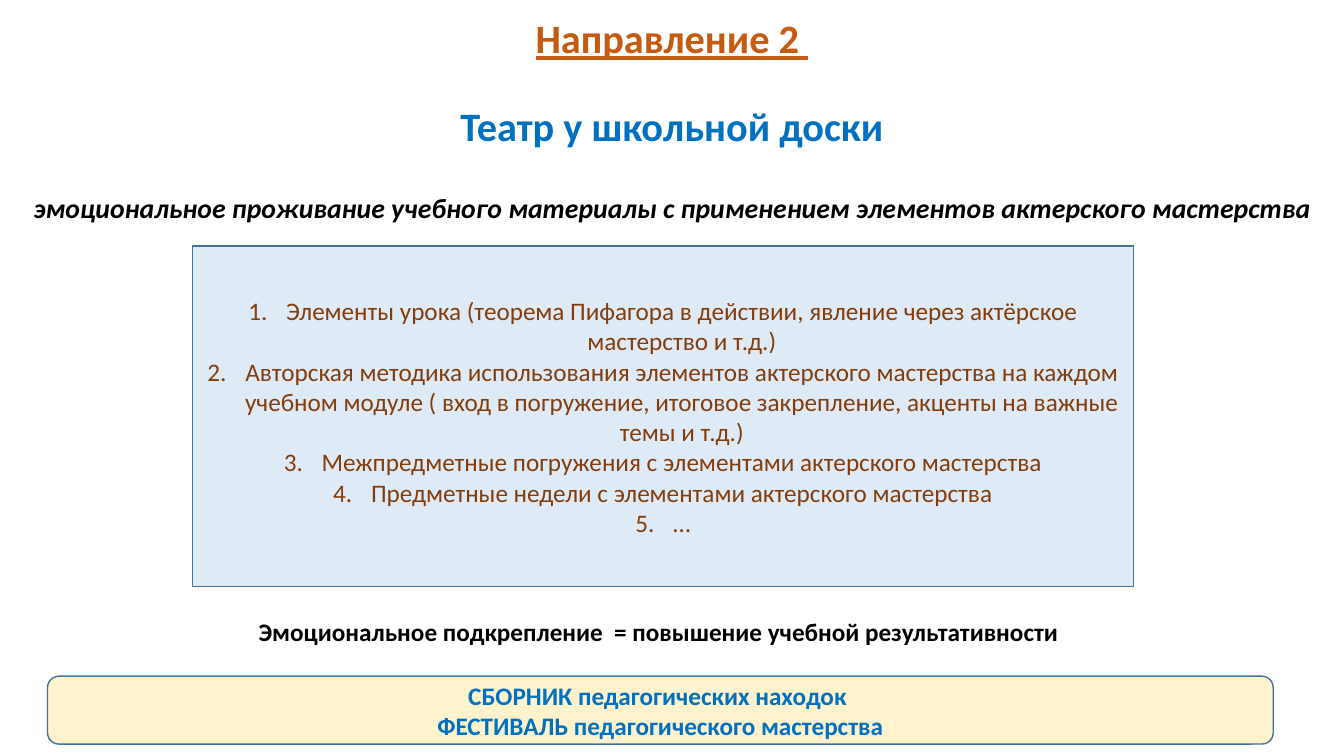
from pptx import Presentation
from pptx.dml.color import RGBColor
from pptx.enum.shapes import MSO_SHAPE as Kind
from pptx.enum.text import MSO_ANCHOR as Anchor, PP_ALIGN as Align
from pptx.oxml.ns import qn
from pptx.util import Pt
from lxml.etree import SubElement as Sub

ORANGE, BLUE, BROWN, BLACK = "C55A11", "0070C0", "843C0B", "000000"
PALE, CREAM, EDGE = "DEEBF7", "FFF2CC", "43739E"


def color(code):
    return RGBColor.from_string(code)


class Board:
    """Holds the style and the slide being drawn."""

    font = "Calibri"
    size = 18

    def __init__(self, slide):
        self.slide = slide

    def style(self, par, tint, size=None, bold=True, italic=None, under=None):
        par.alignment = Align.CENTER
        for run in par.runs:
            font = run.font
            font.name = self.font
            font.size = Pt(size or self.size)
            font.color.rgb = color(tint)
            font.bold, font.italic, font.underline = bold, italic, under

    def text(self, box, lines, anchor=Anchor.TOP):
        area = self.slide.shapes.add_textbox(*map(Pt, box))
        return self.fill(area, lines, anchor)

    def fill(self, shape, lines, anchor=Anchor.MIDDLE):
        frame = shape.text_frame
        frame.word_wrap = True
        frame.vertical_anchor = anchor
        frame.text = "\n".join(lines)
        return frame.paragraphs

    def panel(self, kind, box, tint, lines):
        shape = self.slide.shapes.add_shape(kind, *map(Pt, box))
        shape.shadow.inherit = False
        shape.fill.solid()
        shape.fill.fore_color.rgb = color(tint)
        shape.line.color.rgb = color(EDGE)
        shape.line.width = Pt(1)
        return self.fill(shape, lines)

    def number(self, par, indent=27):
        props = par._p.get_or_add_pPr()
        props.set("marL", str(Pt(indent)))
        props.set("indent", str(-Pt(indent)))
        Sub(props, qn("a:buFont"), typeface="+mj-lt")
        Sub(props, qn("a:buAutoNum"), type="arabicPeriod")


def main():
    deck = Presentation()
    deck.slide_width, deck.slide_height = Pt(960), Pt(540)
    board = Board(deck.slides.add_slide(deck.slide_layouts[6]))

    # Heading
    head = board.text((0, 0, 960, 173.5), [
        "Направление 2 ",
        "Театр у школьной доски",
        "эмоциональное проживание учебного материалы с применением "
        "элементов актерского мастерства",
    ], Anchor.MIDDLE)
    board.style(head[0], ORANGE, 28.8, under=True)
    board.style(head[1], BLUE, 28.8)
    board.style(head[2], BLACK, 19.8, italic=True)
    for par in head:
        par.line_spacing = 0.9
    for par in head[1:]:
        par.space_before = Pt(31.6)

    # Numbered list
    for par in board.panel(Kind.RECTANGLE, (137.5, 175.7, 672, 243.5), PALE, [
        "Элементы урока (теорема Пифагора в действии, явление через "
        "актёрское мастерство и т.д.)",
        "Авторская методика использования элементов актерского мастерства "
        "на каждом учебном модуле ( вход в погружение, итоговое "
        "закрепление, акценты на важные темы и т.д.)",
        "Межпредметные погружения с элементами актерского мастерства",
        "Предметные недели с элементами актерского мастерства",
        "…",
    ]):
        board.style(par, BROWN, bold=False)
        board.number(par)

    # Outcome
    for par in board.text((106, 437, 733, 29), [
        "Эмоциональное подкрепление  = повышение учебной результативности ",
    ]):
        board.style(par, BLACK)

    # Products
    for par in board.panel(Kind.ROUNDED_RECTANGLE, (34, 483, 875.5, 48.5), CREAM, [
        "СБОРНИК педагогических находок ",
        "ФЕСТИВАЛЬ педагогического мастерства",
    ]):
        board.style(par, BLUE)

    deck.save("out.pptx")


if __name__ == "__main__":
    main()
